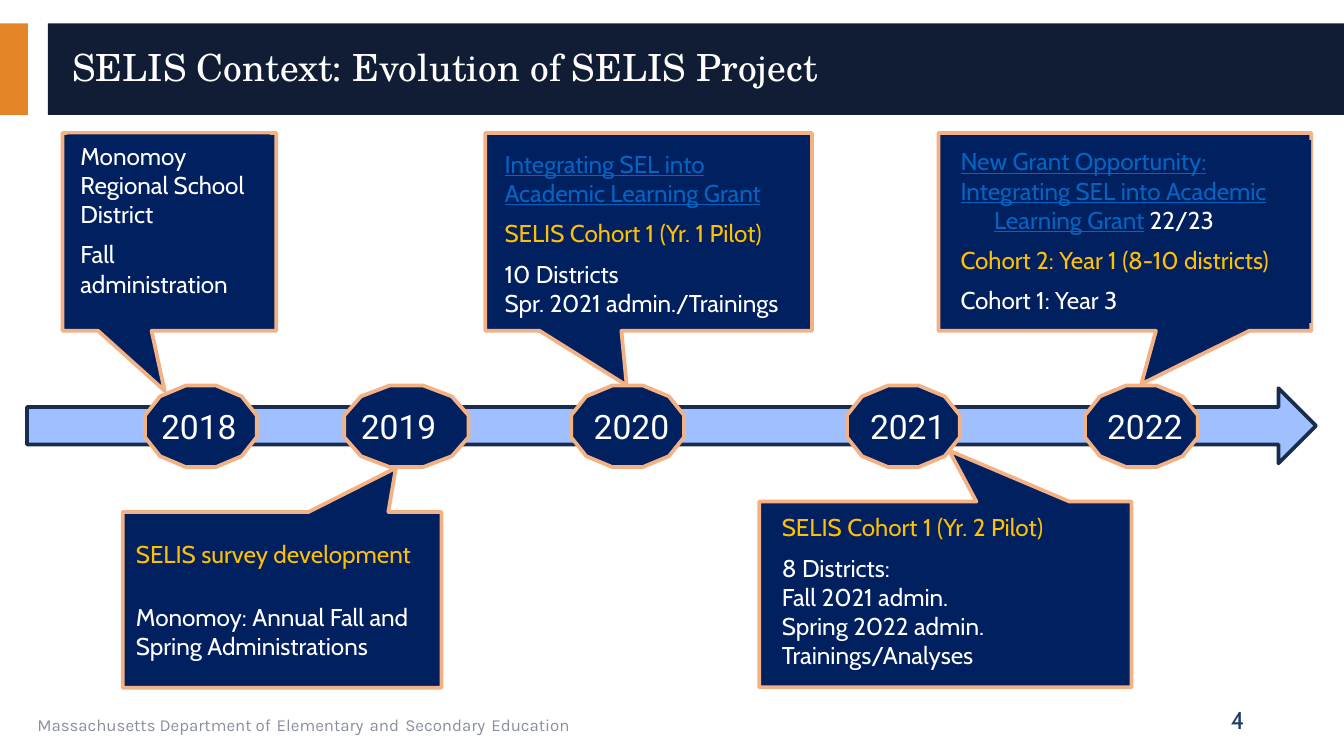
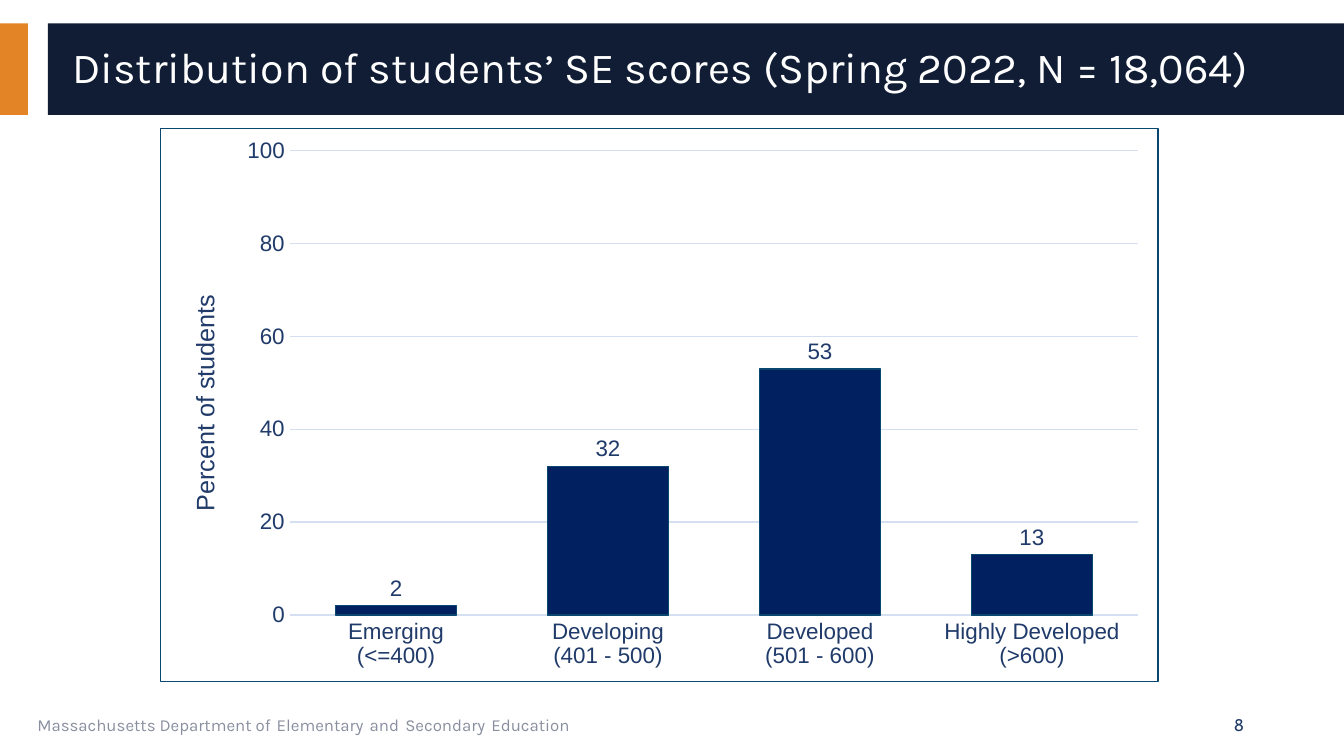
from dataclasses import dataclass

from pptx import Presentation
from pptx.chart.data import CategoryChartData
from pptx.dml.color import RGBColor
from pptx.enum.chart import XL_CHART_TYPE, XL_LABEL_POSITION, XL_TICK_MARK
from pptx.enum.shapes import MSO_SHAPE
from pptx.enum.text import MSO_ANCHOR, PP_ALIGN
from pptx.oxml import parse_xml
from pptx.oxml.ns import nsdecls, qn
from pptx.util import Pt

RECT, ARROW = MSO_SHAPE.RECTANGLE, MSO_SHAPE.RIGHT_ARROW
BUBBLE, BADGE = MSO_SHAPE.RECTANGULAR_CALLOUT, MSO_SHAPE.DODECAGON
TOP, MIDDLE = MSO_ANCHOR.TOP, MSO_ANCHOR.MIDDLE
LEFT, RIGHT = PP_ALIGN.LEFT, PP_ALIGN.RIGHT
COLUMN = XL_CHART_TYPE.COLUMN_CLUSTERED
NO_TICK, ABOVE = XL_TICK_MARK.NONE, XL_LABEL_POSITION.OUTSIDE_END


@dataclass(frozen=True)
class Theme:
    orange: str = "E38526"
    band: str = "101D34"
    navy: str = "002060"
    peach: str = "F4B183"
    sky: str = "9FBFFF"
    edge: str = "182C4E"
    ink: str = "203B6A"
    gray: str = "8A8FA0"
    white: str = "FFFFFF"
    gold: str = "FFC000"
    link: str = "0563C1"
    grid: str = "D4DFF2"
    frame: str = "094771"
    serif: str = "TeX Gyre Schola"
    sans: str = "Karla"
    body: str = "Cabin"
    digit: str = "Roboto"
    plain: str = "Arial"
    small: float = 9
    axis: float = 12
    text: float = 13
    name: float = 13.5
    space: float = 14
    year: float = 18


T = Theme()
SIZE = (720, 405)
TIGHT = (5, 3)
ROOMY = (7.2, 3.6)
HANG = 18

FOOTER = ["Massachusetts Department of", "Elementary", "and", "Secondary",
          "Education"]

# title, font, size, page, page size, page box
HEADS = [
    ("SELIS Context: Evolution of SELIS Project", T.serif, 20,
     "4", 13, (654.5, 375, 16.5, 21)),
    ("Distribution of students’ SE scores (Spring 2022, N = 18,064)", T.sans, 23,
     "8", 9, (651.5, 377.5, 20, 21.5)),
]

# year, badge left, badge width, label left
YEARS = [
    ("2018", 77.75, 59.75, 79.25),
    ("2019", 184.5, 66.5, 186.25),
    ("2020", 306, 60.5, 311),
    ("2021", 453.75, 60.5, 459),
    ("2022", 581.25, 60.5, 586),
]

# Each note: bubble box, tail tip, text box (None: text sits in the bubble),
# paragraphs as (runs, hanging indent, space after)
NOTES = [
    dict(box=(33.5, 71.25, 114.5, 106), tip=(-0.022, 0.803),
         inner=(36, 72, 108.75, 92),
         text=[([("Monomoy Regional School District", T.white)], 0, 6),
               ([("Fall administration", T.white)], 0, 0)]),
    dict(box=(65.75, 274.25, 170.75, 94.25), tip=(0.357, -0.75), inner=None,
         text=[([("SELIS survey development", T.gold)], 0, 18),
               ([("Monomoy: Annual Fall and Spring Administrations",
                  T.white)], 0, 6)]),
    dict(box=(260, 71.25, 175, 106), tip=(-0.067, 0.776),
         inner=(263.25, 76.25, 169, 98),
         text=[([("Integrating SEL into Academic Learning Grant", T.link)], 0, 6),
               ([("SELIS Cohort 1 (Yr. 1 Pilot)", T.gold)], 0, 6),
               ([("10 Districts", T.white)], HANG, 0),
               ([("Spr. 2021 admin./Trainings", T.white)], HANG, 0)]),
    dict(box=(406.75, 268.75, 199.5, 99.5), tip=(0.01, -0.775),
         inner=(411.75, 271, 186.5, 93),
         text=[([("SELIS Cohort 1 (Yr. 2 Pilot)", T.gold)], 0, 6),
               ([("8 Districts:", T.white)], HANG, 0),
               ([("Fall 2021 admin.", T.white)], HANG, 0),
               ([("Spring 2022 admin.", T.white)], HANG, 0),
               ([("Trainings/Analyses", T.white)], HANG, 0)]),
    dict(box=(502.75, 71.25, 199.75, 106), tip=(0.044, 0.769),
         inner=(507.5, 75, 195, 98),
         text=[([("New Grant Opportunity:", T.link)], HANG, 0),
               ([("Integrating SEL into Academic Learning Grant", T.link),
                 (" 22/23", T.white)], HANG, 6),
               ([("Cohort 2: Year 1 (8-10 districts)", T.gold)], HANG, 6),
               ([("Cohort 1: Year 3", T.white)], HANG, 0)]),
]

AXIS = "Percent of students"
SCORES = [("Emerging\n(<=400)", 2), ("Developing\n(401 - 500)", 32),
          ("Developed\n(501 - 600)", 53), ("Highly Developed\n(>600)", 13)]


def rgb(code):
    return RGBColor.from_string(code)


def ink(font, face, size, color):
    font.name, font.size, font.bold = face, Pt(size), False
    font.color.rgb = rgb(color)


def stroke(line, color, width):
    line.color.rgb = rgb(color)
    line.width = Pt(width)


def shape(slide, kind, box, fill, line=None):
    item = slide.shapes.add_shape(kind, *map(Pt, box))
    item.shadow.inherit = False
    item.fill.solid()
    item.fill.fore_color.rgb = rgb(fill)
    if line:
        stroke(item.line, line, 2)
    else:
        item.line.fill.background()
    return item


def setup(item, anchor, inset):
    frame = item.text_frame
    frame.word_wrap = True
    frame.vertical_anchor = anchor
    frame.margin_left = frame.margin_right = Pt(inset[0])
    frame.margin_top = frame.margin_bottom = Pt(inset[1])
    return frame


def label(slide, box, text, face, size, color, anchor=TOP, inset=TIGHT, align=LEFT):
    frame = setup(slide.shapes.add_textbox(*map(Pt, box)), anchor, inset)
    frame.text = text
    para = frame.paragraphs[0]
    para.alignment = align
    ink(para.runs[0].font, face, size, color)
    return para


def add_run(para, text, face, size, color):
    run = para.add_run()
    run.text = text
    ink(run.font, face, size, color)
    return run


def write(item, paras, anchor):
    """Fill a shape with paragraphs of coloured runs."""
    frame = setup(item, anchor, ROOMY)
    for i, (runs, hang, after) in enumerate(paras):
        para = frame.add_paragraph() if i else frame.paragraphs[0]
        para.alignment = LEFT
        para.space_after = Pt(after)
        if hang:
            props = para._p.get_or_add_pPr()
            props.set("marL", str(Pt(hang)))
            props.set("indent", str(-Pt(hang)))
        for text, color in runs:
            run = add_run(para, text, T.body, T.text, color)
            run.font.underline = color == T.link


def base(deck, head):
    """Add a slide with the band, title, footer and page number."""
    title, face, size, page, small, spot = head
    slide = deck.slides.add_slide(deck.slide_layouts[6])
    shape(slide, RECT, (0, 12.5, 15, 49), T.orange)
    shape(slide, RECT, (25.75, 12.5, 694.25, 49), T.band)
    foot = label(slide, (15, 375, 456, 21.5), FOOTER[0], T.sans, T.small, T.gray)
    for word in FOOTER[1:]:
        add_run(foot, " ", T.sans, T.space, T.ink)
        add_run(foot, word, T.sans, T.small, T.gray)
    para = label(slide, (33.75, 17, 672, 40.5), title, face, size, T.white, MIDDLE)
    para.line_spacing = 0.9
    label(slide, spot, page, T.body, small, T.ink, MIDDLE, align=RIGHT)
    return slide


def timeline(slide):
    shape(slide, ARROW, (14.5, 208, 690.5, 40.25), T.sky, T.edge)
    for year, left, width, start in YEARS:
        shape(slide, BADGE, (left, 206.5, width, 43.75), T.navy, T.peach)
        label(slide, (start, 214, width, 29), year, T.digit, T.year, T.white,
              inset=ROOMY)
    for note in NOTES:
        item = shape(slide, BUBBLE, note["box"], T.navy, T.peach)
        for i, value in enumerate(note["tip"]):
            item.adjustments[i] = value
        anchor = MIDDLE
        if note["inner"]:
            item, anchor = shape(slide, RECT, note["inner"], T.navy), TOP
        write(item, note["text"], anchor)


def place(chart, x, y, w, h):
    """Fix the inner plot area, as fractions of the chart."""
    area = chart.element.find(".//" + qn("c:plotArea"))
    for old in area.findall(qn("c:layout")):
        area.remove(old)
    spots = "".join(f'<c:{k} val="{v}"/>' for k, v in
                    zip("xywh", (x, y, w, h)))
    area.insert(0, parse_xml(
        f'<c:layout {nsdecls("c")}><c:manualLayout><c:layoutTarget val="inner"/>'
        f'<c:xMode val="edge"/><c:yMode val="edge"/>{spots}'
        '</c:manualLayout></c:layout>'))


def border(chart, color, width):
    chart.element.find(qn("c:chart")).addnext(parse_xml(
        f'<c:spPr {nsdecls("c", "a")}><a:noFill/><a:ln w="{Pt(width)}"><a:solidFill>'
        f'<a:srgbClr val="{color}"/></a:solidFill></a:ln></c:spPr>'))


def scores(slide):
    data = CategoryChartData(number_format="0")
    data.categories = [name for name, _ in SCORES]
    data.add_series("Series 1", [value for _, value in SCORES])
    box = (85.5, 68.5, 535.25, 297)
    chart = slide.shapes.add_chart(COLUMN, *map(Pt, box), data).chart
    chart.has_legend = chart.has_title = False
    ink(chart.font, T.plain, 10, T.ink)
    cats, vals = chart.category_axis, chart.value_axis
    for axis in (cats, vals):
        axis.major_tick_mark = axis.minor_tick_mark = NO_TICK
        ink(axis.tick_labels.font, T.plain, T.axis, T.ink)
    stroke(cats.format.line, T.grid, 0.75)
    vals.format.line.fill.background()
    vals.minimum_scale, vals.maximum_scale, vals.major_unit = 0, 100, 20
    vals.has_major_gridlines = True
    stroke(vals.major_gridlines.format.line, T.grid, 0.75)
    frame = vals.axis_title.text_frame
    frame.text = AXIS
    ink(frame.paragraphs[0].runs[0].font, T.plain, T.name, T.ink)
    plot = chart.plots[0]
    plot.gap_width = 75
    plot.vary_by_categories = False
    bars = plot.series[0].format
    bars.fill.solid()
    bars.fill.fore_color.rgb = rgb(T.navy)
    stroke(bars.line, T.frame, 0.75)
    plot.has_data_labels = True
    tags = plot.data_labels
    tags.show_value, tags.position = True, ABOVE
    ink(tags.font, T.plain, T.axis, T.ink)
    place(chart, 0.13, 0.04, 0.85, 0.84)
    border(chart, T.frame, 0.75)


def main():
    deck = Presentation()
    deck.slide_width, deck.slide_height = map(Pt, SIZE)
    for head, draw in zip(HEADS, (timeline, scores)):
        draw(base(deck, head))
    deck.save("out.pptx")


if __name__ == "__main__":
    main()
